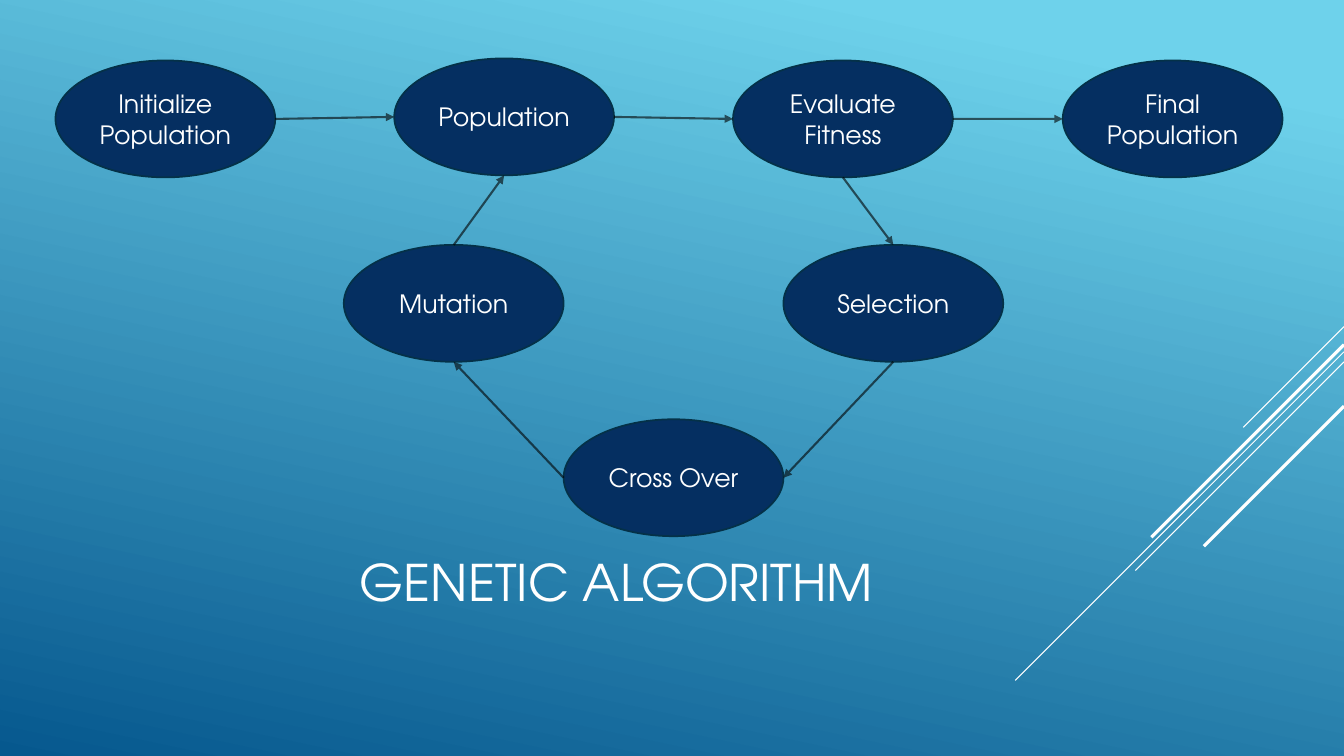
from dataclasses import dataclass

from lxml.etree import SubElement
from pptx import Presentation
from pptx.dml.color import RGBColor as RGB
from pptx.enum.shapes import MSO_CONNECTOR as CONNECTOR, MSO_SHAPE as SHAPE
from pptx.enum.text import MSO_ANCHOR as ANCHOR, PP_ALIGN as ALIGN
from pptx.oxml.ns import qn
from pptx.util import Inches, Pt


@dataclass(frozen=True)
class Theme:
    font: str = "TeX Gyre Adventor"
    title_size: float = 36
    step_size: float = 18
    text: RGB = RGB(0xFF, 0xFF, 0xFF)
    sky: RGB = RGB(0x6E, 0xD2, 0xEB)
    deep: RGB = RGB(0x06, 0x58, 0x8E)
    step_fill: RGB = RGB(0x05, 0x2F, 0x61)
    step_edge: RGB = RGB(0x04, 0x31, 0x48)
    arrow: RGB = RGB(0x00, 0x00, 0x00)


theme = Theme()
deck = Presentation()
deck.slide_width, deck.slide_height = Inches(13.33), Inches(7.5)
slide = deck.slides.add_slide(deck.slide_layouts[6])


def add_line(start, end, color, weight):
    """Draw a straight line without shadow between two points in inches."""
    line = slide.shapes.add_connector(
        CONNECTOR.STRAIGHT, *[Inches(value) for value in (*start, *end)])
    line.line.color.rgb = color
    line.line.width = Pt(weight)
    SubElement(line._element.spPr, qn("a:effectLst"))
    return line


def write_centred(shape, text, size):
    frame = shape.text_frame
    frame.word_wrap = True
    frame.vertical_anchor = ANCHOR.MIDDLE
    paragraph = frame.paragraphs[0]
    paragraph.alignment = ALIGN.CENTER
    run = paragraph.add_run()
    run.text = text
    run.font.name = theme.font
    run.font.size = Pt(size)
    run.font.color.rgb = theme.text


# Background gradient, light at the top right
backdrop = slide.background.fill
backdrop.gradient()
backdrop.gradient_angle = 360 - 102
for stop, position, color in zip(
        backdrop.gradient_stops, (0.1, 1), (theme.sky, theme.deep)):
    stop.position = position
    stop.color.rgb = color

# Diagonal streaks rising to the right edge: top, length across, weight
right_edge = 13.33
for top, reach, weight in [(3.24, 1, 0.75), (3.49, 3.26, 0.75), (3.59, 2.07, 0.75),
                           (3.42, 1.91, 2.25), (4.03, 1.39, 2.25)]:
    add_line((right_edge, top), (right_edge - reach, top + reach), theme.text, weight)

title = slide.shapes.add_textbox(
    Inches(1.45), Inches(4.94), Inches(9.33), Inches(1.65))
write_centred(title, "GENETIC ALGORITHM", theme.title_size)

# Steps of the algorithm: left and top of each ellipse
step_width, step_height = 2.18, 1.16
step_places = {
    "Initialize Population": (0.55, 0.6),
    "Population": (3.91, 0.58),
    "Evaluate Fitness": (7.27, 0.6),
    "Final Population": (10.54, 0.6),
    "Selection": (7.77, 2.43),
    "Cross Over": (5.59, 4.16),
    "Mutation": (3.41, 2.43),
}
steps = {}
for name, (left, top) in step_places.items():
    step = slide.shapes.add_shape(
        SHAPE.OVAL, Inches(left), Inches(top), Inches(step_width), Inches(step_height))
    step.shadow.inherit = False
    step.fill.solid()
    step.fill.fore_color.rgb = theme.step_fill
    step.line.color.rgb = theme.step_edge
    step.line.width = Pt(1.25)
    write_centred(step, name, theme.step_size)
    steps[name] = step

# Each side: connection site of an ellipse, and its place as shares of the size
sides = {"top": (0, 0.5, 0), "left": (2, 0, 0.5),
         "bottom": (4, 0.5, 1), "right": (6, 1, 0.5)}
flow = [
    ("Initialize Population", "right", "Population", "left"),
    ("Population", "right", "Evaluate Fitness", "left"),
    ("Evaluate Fitness", "right", "Final Population", "left"),
    ("Evaluate Fitness", "bottom", "Selection", "top"),
    ("Selection", "bottom", "Cross Over", "right"),
    ("Cross Over", "left", "Mutation", "bottom"),
    ("Mutation", "top", "Population", "bottom"),
]
for source, source_side, target, target_side in flow:
    points, joints = [], []
    for name, side, joint in [(source, source_side, "a:stCxn"),
                              (target, target_side, "a:endCxn")]:
        site, across, down = sides[side]
        left, top = step_places[name]
        points.append((left + across * step_width, top + down * step_height))
        joints.append((joint, steps[name].shape_id, site))
    arrow = add_line(*points, theme.arrow, 1.5)
    for joint, step_id, site in joints:
        SubElement(arrow._element.nvCxnSpPr.cNvCxnSpPr, qn(joint),
                   id=str(step_id), idx=str(site))
    outline = arrow.line._ln
    SubElement(outline.find(".//" + qn("a:srgbClr")), qn("a:alpha"), val="60000")
    SubElement(outline, qn("a:tailEnd"), type="triangle")

deck.save("out.pptx")
